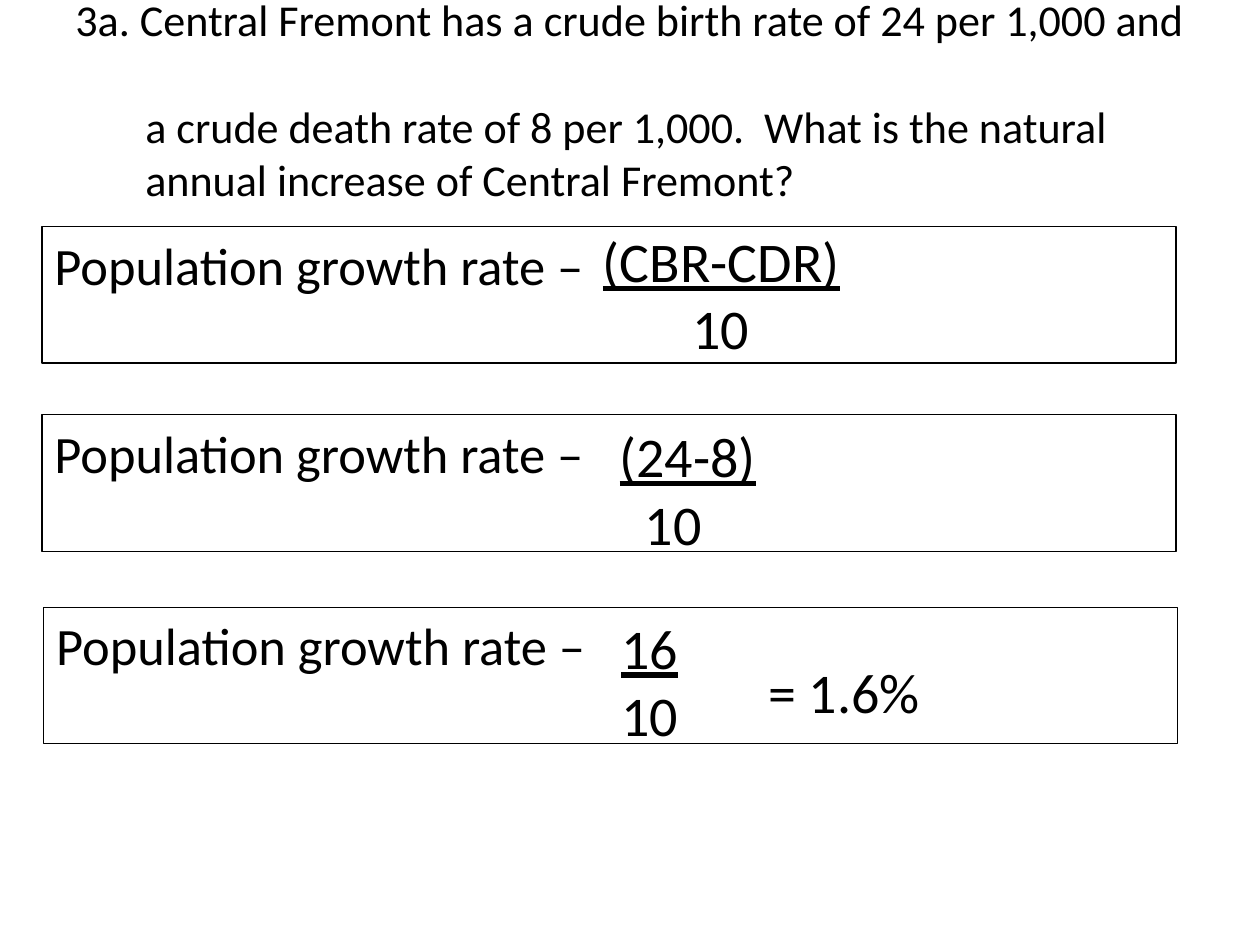
import pptx
import pptx.dml.color
import pptx.enum.shapes
import pptx.enum.text
import pptx.util

Pt = pptx.util.Pt
COLOURS = {"ink": "000000"}


def colour(name):
    return pptx.dml.color.RGBColor.from_string(COLOURS[name])


def write(paragraph, text, size=32, underline=False, indent=0, after=0):
    """Fill a paragraph with one formatted run; indent and after are in points."""
    run = paragraph.add_run()
    run.text = text
    run.font.name = "Calibri"
    run.font.size = Pt(size)
    run.font.underline = underline
    run.font.color.rgb = colour("ink")
    paragraph.alignment = pptx.enum.text.PP_ALIGN.LEFT
    paragraph.space_after = Pt(after)
    if indent:
        properties = paragraph._p.get_or_add_pPr()
        properties.set("marL", str(Pt(indent)))
        properties.set("indent", "0")


class SlideBuilder:
    def __init__(self, slide):
        self.slide = slide

    def text(self, left, top, width, height, lines):
        """Add a text box from (text, format) pairs, one paragraph each."""
        box = self.slide.shapes.add_textbox(Pt(left), Pt(top), Pt(width), Pt(height))
        frame = box.text_frame
        frame.word_wrap = True
        for index, (text, style) in enumerate(lines):
            paragraph = frame.add_paragraph() if index else frame.paragraphs[0]
            write(paragraph, text, **style)
        return frame

    def question(self, lines, size=25.2):
        first, *rest = lines
        styled = [(first, {"size": size, "after": 30.5})]
        styled += [(line, {"size": size, "indent": 40}) for line in rest]
        frame = self.text(18 * 2, 18, 648, 108, styled)
        frame.vertical_anchor = pptx.enum.text.MSO_ANCHOR.MIDDLE
        frame.margin_top = frame.margin_right = 0
        frame.margin_bottom = Pt(31)

    def outlined_label(self, left, top, text):
        shape = self.slide.shapes.add_shape(
            pptx.enum.shapes.MSO_SHAPE.RECTANGLE, Pt(left), Pt(top), Pt(648), Pt(78))
        shape.shadow.inherit = False
        shape.fill.background()
        shape.line.color.rgb = colour("ink")
        shape.line.width = Pt(0.75)
        shape.text_frame.word_wrap = True
        shape.text_frame.vertical_anchor = pptx.enum.text.MSO_ANCHOR.TOP
        write(shape.text_frame.paragraphs[0], text, size=30)

    def fraction(self, left, top, width, numerator, denominator, indent):
        self.text(left, top, width, 85, [
            (numerator, {"underline": True}),
            (denominator, {"indent": indent}),
        ])


def main():
    presentation = pptx.Presentation()
    presentation.slide_width, presentation.slide_height = Pt(720), Pt(540)
    builder = SlideBuilder(presentation.slides.add_slide(presentation.slide_layouts[6]))

    builder.question([
        "3a. Central Fremont has a crude birth rate of 24 per 1,000 and",
        "a crude death rate of 8 per 1,000.  What is the natural",
        "annual increase of Central Fremont?",
    ])

    # label left and top, then fraction left, top, width, numerator and indent
    steps = [
        (24, 129.5, 337.5, 126, 180, "(CBR-CDR)", 51),
        (24, 237, 347, 237.5, 103, "(24-8)", 14.5),
        (25, 347, 348, 347, 103, "16", 0),
    ]
    for label_left, label_top, left, top, width, numerator, indent in steps:
        builder.outlined_label(label_left, label_top, "Population growth rate –")
        builder.fraction(left, top, width, numerator, "10", indent)
    builder.text(432, 372, 162, 46, [("= 1.6%", {})])

    presentation.save("out.pptx")


if __name__ == "__main__":
    main()
